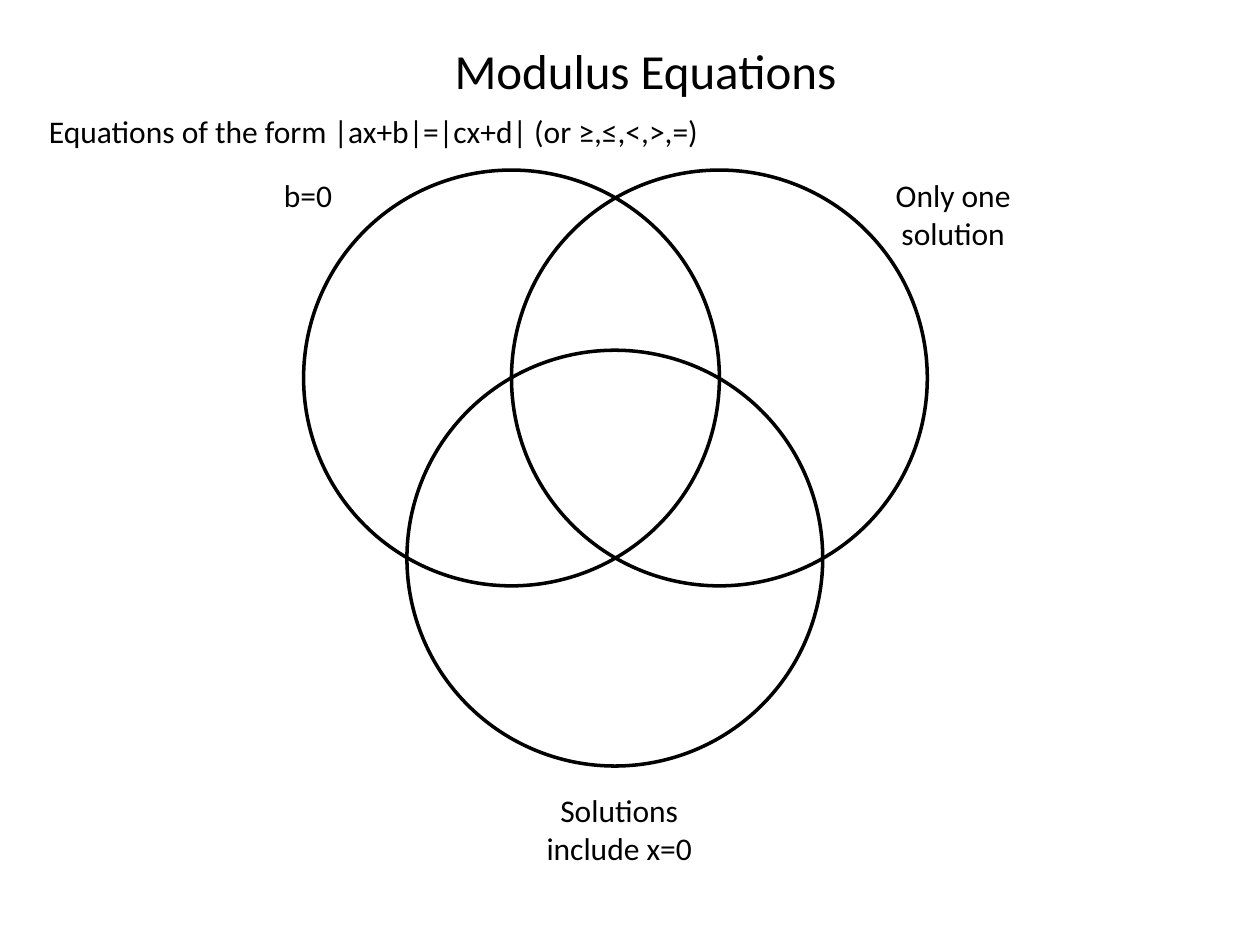
import math
from dataclasses import dataclass

from pptx import Presentation, util as u
from pptx.dml.color import RGBColor
from pptx.enum import shapes, text

PX = 9144  # 100 px to the inch
HEX = {"ink": "000000", "page": "FFFFFF"}
INK = RGBColor.from_string(HEX["ink"])
DIAM = 330
LEFT, TOP = 241, 135


@dataclass
class Ring:
    x: int
    y: int


@dataclass
class Label:
    words: str
    x: int
    y: int
    w: int
    h: int
    size: int = 18
    wrap: bool = True


# Each circle passes through the centres of the other two
RINGS = [
    Ring(LEFT, TOP),
    Ring(LEFT + DIAM // 2, TOP),
    Ring(LEFT + DIAM // 4, TOP + round(DIAM * math.sqrt(3) / 4)),
]

LABELS = [
    Label("b=0", 166, TOP, 157, 40),
    Label("Only one solution", 678, TOP, 157, 71),
    Label("Solutions include x=0", 413, 623, 157, 71),
    Label("Equations of the form |ax+b|=|cx+d| (or ≥,≤,<,>,=)",
          29, 84, 542, 40, wrap=False),
    Label("Modulus Equations", 351, 27, 327, 57, size=28, wrap=False),
]


def style(item, form: dict) -> None:
    for key, val in form.items():
        setattr(item, key, val)


def draw_ring(group, ring: Ring) -> None:
    oval = group.shapes.add_shape(
        shapes.MSO_SHAPE.OVAL, ring.x * PX, ring.y * PX, DIAM * PX, DIAM * PX)
    oval.shadow.inherit = False
    oval.fill.background()
    oval.line.color.rgb = INK
    oval.line.width = u.Pt(2)


def draw_label(slide, label: Label) -> None:
    box = slide.shapes.add_textbox(
        label.x * PX, label.y * PX, label.w * PX, label.h * PX)
    frame = box.text_frame
    style(frame, {"word_wrap": label.wrap,
                  "auto_size": text.MSO_AUTO_SIZE.SHAPE_TO_FIT_TEXT})
    para = frame.paragraphs[0]
    align = text.PP_ALIGN.CENTER if label.wrap else text.PP_ALIGN.LEFT
    para.alignment = align
    run = para.add_run()
    run.text = label.words
    style(run.font, {"name": "Calibri", "size": u.Pt(label.size)})
    run.font.color.rgb = INK


def main() -> None:
    deck = Presentation()
    style(deck, {"slide_width": 1000 * PX, "slide_height": 750 * PX})
    slide = deck.slides.add_slide(deck.slide_layouts[6])
    fill = slide.background.fill
    fill.solid()
    fill.fore_color.rgb = RGBColor.from_string(HEX["page"])

    # Venn diagram
    venn = slide.shapes.add_group_shape()
    for ring in RINGS:
        draw_ring(venn, ring)

    # Set names, subtitle and title
    for label in LABELS:
        draw_label(slide, label)

    deck.save("out.pptx")


if __name__ == "__main__":
    main()
